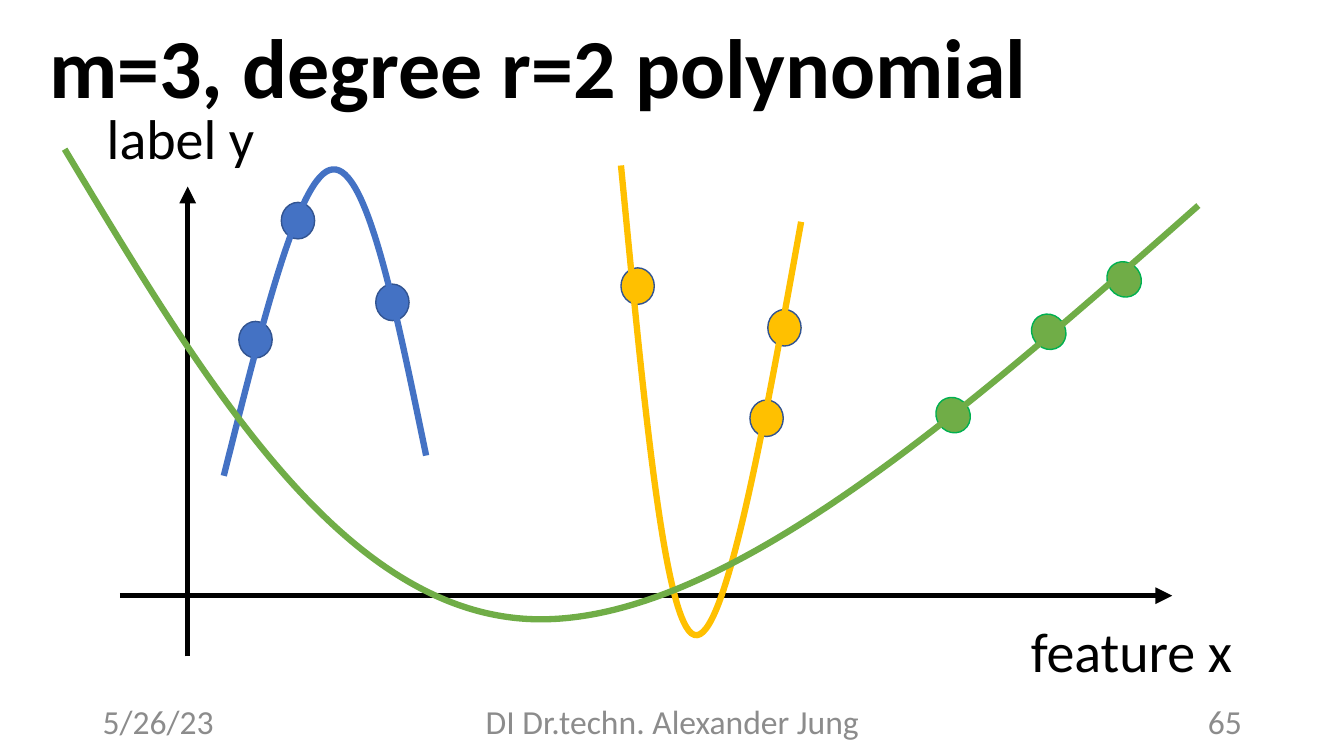
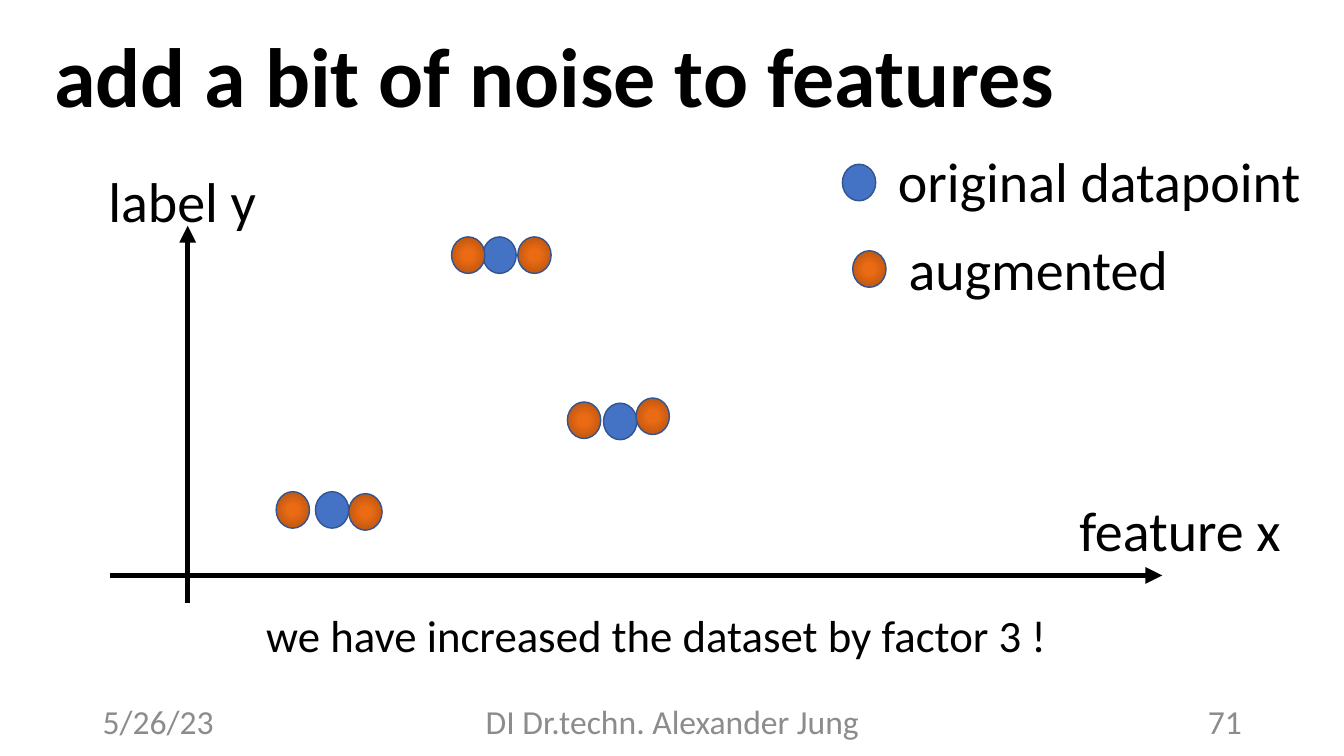
from lxml import etree
from pptx import Presentation
from pptx.dml.color import RGBColor
from pptx.enum import shapes, text
from pptx.oxml import parse_xml
from pptx.oxml.ns import nsdecls, qn
from pptx.util import Cm, Pt

FONT = "Calibri"
BLACK, GREY = "000000", "8C8C8C"
BLUE, YELLOW, GREEN = "4472C4", "FFC000", "70AD47"
DOT_EDGE, GREEN_EDGE = "325491", "00B050"
ORANGE_STOPS = ((0, "EA6B14"), (23, "EA6B14"), (69, "C55A11"), (97, "B85410"))
DOT_WIDTH, DOT_HEIGHT = 0.84, 0.92
LEFT, CENTER, RIGHT = text.PP_ALIGN.LEFT, text.PP_ALIGN.CENTER, text.PP_ALIGN.RIGHT


def color(value):
    return RGBColor.from_string(value)


def write(box, words, size=40, ink=BLACK, bold=False, align=LEFT,
          anchor=text.MSO_ANCHOR.TOP, spacing=None):
    frame = box.text_frame
    frame.word_wrap = True
    frame.vertical_anchor = anchor
    para = frame.paragraphs[0]
    para.alignment = align
    para.line_spacing = spacing
    span = para.add_run()
    span.text = words
    span.font.name = FONT
    span.font.size = Pt(size)
    span.font.bold = bold
    span.font.color.rgb = color(ink)


def bend(segment, points, origin):
    """Turn a straight freeform segment into a cubic curve."""
    cubic = etree.Element(qn("a:cubicBezTo"))
    for x, y in points:
        etree.SubElement(cubic, qn("a:pt"), x=str(x - origin[0]), y=str(y - origin[1]))
    segment.getparent().replace(segment, cubic)


def radial_fill(stops):
    marks = "".join(f'<a:gs pos="{place * 1000}"><a:srgbClr val="{value}"/></a:gs>'
                    for place, value in stops)
    return parse_xml(
        f'<a:gradFill {nsdecls("a")} rotWithShape="1"><a:gsLst>{marks}</a:gsLst>'
        '<a:path path="circle"><a:fillToRect l="50000" t="50000" r="50000" b="50000"/>'
        '</a:path></a:gradFill>')


class Plotter:
    """Holds the deck, its style and the current page; lengths are in cm."""

    def __init__(self):
        self.deck = Presentation()
        self.deck.slide_width, self.deck.slide_height = Cm(33.87), Cm(19.05)
        self.page = None

    def start_page(self, title, left, top, height, number):
        self.page = self.deck.slides.add_slide(self.deck.slide_layouts[6])
        middle = text.MSO_ANCHOR.MIDDLE
        self.label(title, left, top, 29.25, height, size=60, bold=True,
                   anchor=middle, spacing=0.9)
        for words, x, width, align in (("5/26/23", 2.34, 7.62, LEFT),
                                       ("DI Dr.techn. Alexander Jung", 11.23, 11.43, CENTER),
                                       (number, 23.93, 7.62, RIGHT)):
            self.label(words, x, 17.65, width, 1.02, size=24, ink=GREY,
                       align=align, anchor=middle)

    def label(self, words, left, top, width, height=1.96, **style):
        box = self.page.shapes.add_textbox(Cm(left), Cm(top), Cm(width), Cm(height))
        write(box, words, **style)

    def arrow(self, start, end):
        line = self.page.shapes.add_connector(
            shapes.MSO_CONNECTOR.STRAIGHT, *(Cm(v) for v in (*start, *end)))
        line.line.color.rgb = color(BLACK)
        line.line.width = Pt(4)
        etree.SubElement(line.line._get_or_add_ln(), qn("a:tailEnd"), type="triangle")
        etree.SubElement(line._element.spPr, qn("a:effectLst"))

    def axes(self, left, baseline, bottom, top):
        self.arrow((left, baseline), (left + 26.52, baseline))
        self.arrow((4.73, bottom), (4.73, top))

    def dots(self, centers, fill, edge=DOT_EDGE, turn=0):
        """Fill is one colour or a series of gradient stops."""
        for x, y in centers:
            dot = self.page.shapes.add_shape(
                shapes.MSO_SHAPE.OVAL, Cm(x - DOT_WIDTH / 2), Cm(y - DOT_HEIGHT / 2),
                Cm(DOT_WIDTH), Cm(DOT_HEIGHT))
            dot.shadow.inherit = False
            dot.rotation = turn
            dot.line.color.rgb = color(edge)
            dot.line.width = Pt(1)
            if isinstance(fill, str):
                dot.fill.solid()
                dot.fill.fore_color.rgb = color(fill)
            else:
                dot._element.spPr.find(qn("a:prstGeom")).addnext(radial_fill(fill))

    def curve(self, points, ink):
        """Two joined cubic curves through seven points."""
        points = [(Cm(x), Cm(y)) for x, y in points]
        builder = self.page.shapes.build_freeform(*points[0])
        builder.add_line_segments(points[3::3], close=False)
        outline = builder.convert_to_shape()
        segments = list(outline._element.iter(qn("a:lnTo")))
        for segment, controls in zip(segments, (points[1:4], points[4:])):
            bend(segment, controls, (outline.left, outline.top))
        outline.shadow.inherit = False
        outline.fill.background()
        outline.line.color.rgb = color(ink)
        outline.line.width = Pt(4.5)


def polynomial_page(plot):
    plot.start_page("m=3, degree r=2 polynomial", 0.99, -0.05, 3.68, "65")
    plot.axes(3.02, 15.01, 16.54, 4.7)
    plot.dots([(6.44, 8.56), (7.51, 5.56), (9.89, 7.62)], BLUE)
    plot.curve([(5.64, 11.99), (6.6, 8.18), (7.54, 4.34), (8.38, 4.27),
                (9.25, 4.17), (9.98, 7.82), (10.74, 11.48)], BLUE)
    plot.dots([(16.07, 7.21), (19.32, 10.54), (19.77, 8.26)], YELLOW)
    plot.curve([(15.65, 4.17), (16.21, 9.96), (16.74, 15.77), (17.5, 16),
                (18.26, 16.23), (19.23, 10.92), (20.19, 5.59)], YELLOW)
    plot.dots([(24.02, 10.46), (26.43, 8.36), (28.33, 7.04)], GREEN, GREEN_EDGE, 323.7)
    plot.curve([(1.63, 3.76), (5.11, 9.55), (8.56, 15.37), (13.34, 15.6),
                (18.08, 15.82), (24.16, 10.52), (30.2, 5.18)], GREEN)
    plot.label("label y", 2.44, 2.49, 4.6)
    plot.label("feature x", 25.73, 15.42, 5.97)


def noise_page(plot):
    plot.start_page("add a bit of noise to features", 1.12, 0.41, 3.25, "71")
    plot.axes(2.77, 14.5, 15.19, 5.69)
    plot.dots([(8.37, 12.85), (12.59, 6.43), (15.63, 10.62)], BLUE)
    plot.dots([(7.38, 12.85), (9.21, 12.9), (11.8, 6.43), (13.47, 6.43),
               (14.72, 10.59), (16.45, 10.49)], ORANGE_STOPS)
    plot.dots([(21.65, 4.6)], BLUE)
    plot.label("original datapoint", 22.38, 3.56, 10.75)
    plot.dots([(21.91, 6.78)], ORANGE_STOPS)
    plot.label("augmented", 22.65, 5.79, 7.11)
    plot.label("label y", 2.48, 4.06, 4.27)
    plot.label("feature x", 26.95, 12.37, 5.64)
    plot.label("we have increased the dataset by factor 3 !", 6.46, 15.19, 20.9, 1.63, size=32)


def main():
    plot = Plotter()
    polynomial_page(plot)
    noise_page(plot)
    plot.deck.save("out.pptx")


if __name__ == "__main__":
    main()
